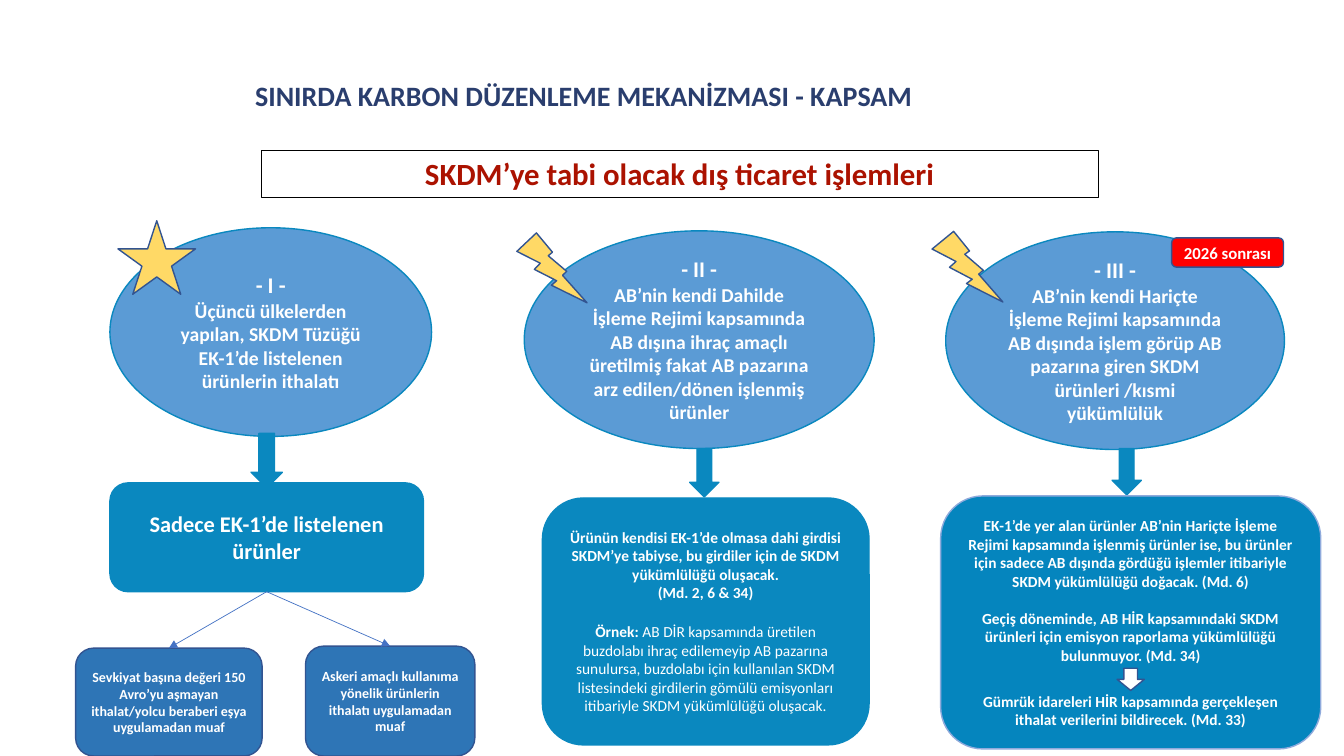
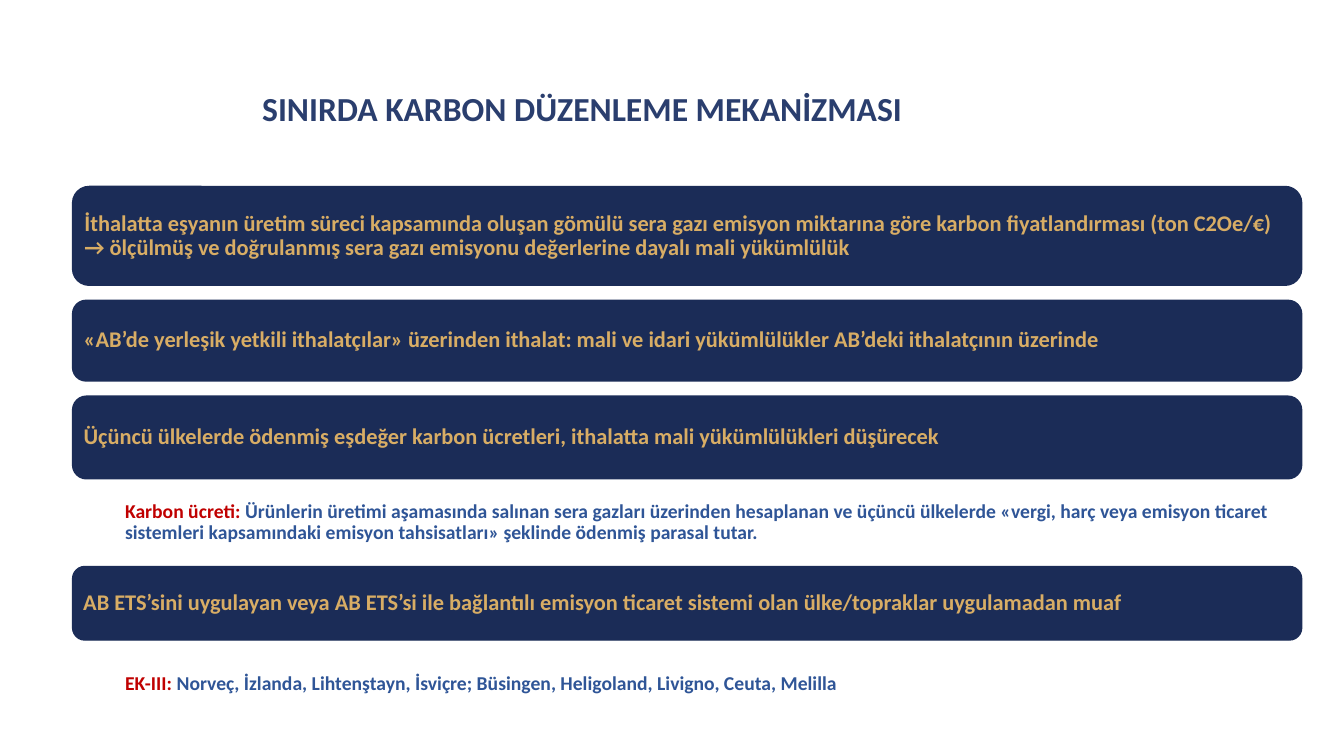
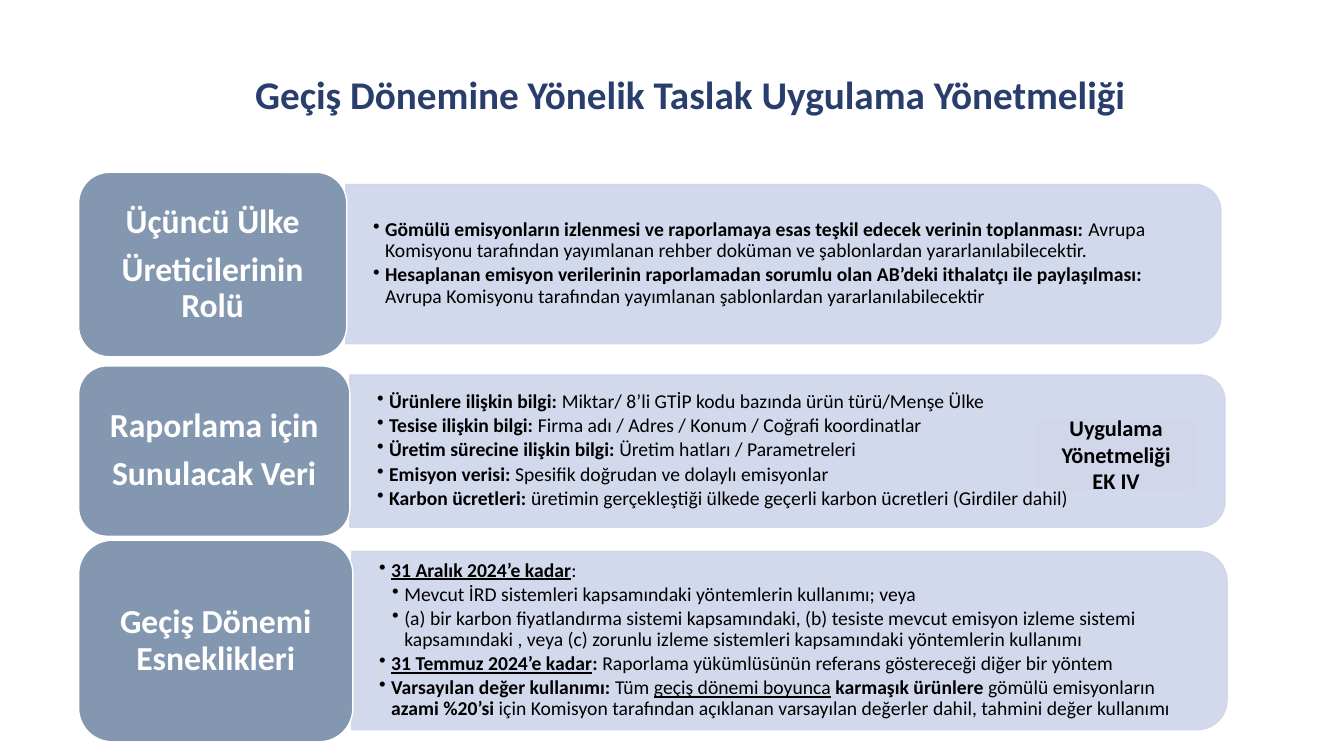
from lxml import etree
from pptx import Presentation
from pptx.dml.color import RGBColor
from pptx.enum.shapes import MSO_CONNECTOR, MSO_SHAPE
from pptx.enum.text import MSO_ANCHOR, MSO_AUTO_SIZE, PP_ALIGN
from pptx.oxml.ns import qn
from pptx.util import Inches, Pt

RECTANGLE, ROUNDED, OVAL = MSO_SHAPE.RECTANGLE, MSO_SHAPE.ROUNDED_RECTANGLE, MSO_SHAPE.OVAL
ARROW, STAR, BOLT = MSO_SHAPE.DOWN_ARROW, MSO_SHAPE.STAR_5_POINT, MSO_SHAPE.LIGHTNING_BOLT
ROUND_TOP = MSO_SHAPE.ROUND_2_SAME_RECTANGLE
LEFT, CENTER = PP_ALIGN.LEFT, PP_ALIGN.CENTER
TOP, MIDDLE = MSO_ANCHOR.TOP, MSO_ANCHOR.MIDDLE
FONT = "Calibri"
COLORS = {
    "title": "2A3E6E", "heading": "AB1200", "black": "000000", "white": "FFFFFF",
    "oval": "5B9BD5", "teal": "0A88BF", "deep teal": "0585BE", "pale edge": "8FAADC",
    "exempt": "2E75B6", "edge": "325491", "connector": "4472C4", "yellow": "FFD966",
    "alert": "FF0000", "navy": "1B2C57", "gold": "D8AD65", "red": "C00000",
    "blue": "2F5597", "band": "CFD5EA", "slate": "8497B0", "annex": "D1D6EA",
}
COLORS = {name: RGBColor.from_string(value) for name, value in COLORS.items()}

deck = Presentation()
deck.slide_width, deck.slide_height = Inches(13.33), Inches(7.5)
COLUMN, ROW = deck.slide_width / 133.3, deck.slide_height / 75


def add_box(slide, kind, at, fill=None, edge=None, width=1):
    left, top, columns, rows = at
    box = slide.shapes.add_shape(kind, int(left * COLUMN), int(top * ROW),
                                 int(columns * COLUMN), int(rows * ROW))
    box.shadow.inherit = False
    if fill:
        box.fill.solid()
        box.fill.fore_color.rgb = COLORS[fill]
    else:
        box.fill.background()
    if edge:
        box.line.color.rgb = COLORS[edge]
        box.line.width = Pt(width)
    else:
        box.line.fill.background()
    return box


def write(box, paragraphs, size, color="white", bold=True, align=CENTER, anchor=MIDDLE,
          spacing=1, after=0, bullets=(), gaps=()):
    frame = box.text_frame
    frame.word_wrap = True
    frame.auto_size = MSO_AUTO_SIZE.NONE
    frame.vertical_anchor = anchor
    for index, spans in enumerate(paragraphs):
        paragraph = frame.paragraphs[0] if index == 0 else frame.add_paragraph()
        if bullets:
            properties = paragraph._p.get_or_add_pPr()
            properties.set("marL", str(Inches(bullets[index])))
            properties.set("indent", str(Inches(-0.12)))
            etree.SubElement(properties, qn("a:buChar")).set("char", "•")
        paragraph.alignment = align
        paragraph.line_spacing = spacing
        paragraph.space_after = Pt(after)
        paragraph.space_before = Pt(gaps[index] if gaps else 0)
        paragraph.font.name = FONT
        paragraph.font.size = Pt(size)
        paragraph.font.bold = bold
        paragraph.font.color.rgb = COLORS[color]
        for text, mark in [(spans, "")] if isinstance(spans, str) else spans:
            span = paragraph.add_run()
            span.text = text
            if "bold" in mark:
                span.font.bold = True
            if "plain" in mark:
                span.font.bold = False
            if "underline" in mark:
                span.font.underline = True
            if "red" in mark:
                span.font.color.rgb = COLORS["red"]


titles = [
    ("SINIRDA KARBON DÜZENLEME MEKANİZMASI - KAPSAM", 20, 1, (24.3, 7.3, 78.5, 4.4)),
    ("SINIRDA KARBON DÜZENLEME MEKANİZMASI", 24, 1, (25, 8.2, 78.4, 5)),
    ("Geçiş Dönemine Yönelik Taslak Uygulama Yönetmeliği", 28, 0.9, (24.3, 7, 100.3, 8.6)),
]
slides = []
for text, size, spacing, (left, top, columns, rows) in titles:
    slide = deck.slides.add_slide(deck.slide_layouts[5])
    title = slide.shapes.title
    title.left, title.top = int(left * COLUMN), int(top * ROW)
    title.width, title.height = int(columns * COLUMN), int(rows * ROW)
    write(title, [text], size, "title", align=LEFT, anchor=TOP, spacing=spacing)
    slides.append(slide)
scope, mechanism, regulation = slides

heading = add_box(scope, RECTANGLE, (25.9, 14.9, 83, 4.7), None, "black", 0.25)
write(heading, ["SKDM’ye tabi olacak dış ticaret işlemleri"], 22, "heading", anchor=TOP)

cases = [
    ((10.9, 22.6, 31.9, 20.7), (24.9, 43, 3.1, 5.4), "- I -",
     "Üçüncü ülkelerden yapılan, SKDM Tüzüğü EK-1’de listelenen ürünlerin ithalatı"),
    ((52, 22.9, 34.7, 21.6), (68.4, 44.5, 2.9, 4.8), "- II -",
     "AB’nin kendi Dahilde İşleme Rejimi kapsamında AB dışına ihraç amaçlı üretilmiş "
     "fakat AB pazarına arz edilen/dönen işlenmiş ürünler"),
    ((93.8, 23, 33.6, 21.6), (110.3, 44.5, 2.9, 4.6), "- III -",
     "AB’nin kendi Hariçte İşleme Rejimi kapsamında AB dışında işlem görüp AB pazarına "
     "giren SKDM ürünleri /kısmi yükümlülük"),
]
for oval_at, arrow_at, number, text in cases:
    oval = add_box(scope, OVAL, oval_at, "oval", "teal")
    write(oval, [number, text], 14)
    oval.text_frame.paragraphs[0].font.size = Pt(16)
    add_box(scope, ARROW, arrow_at, "teal", "teal")

outcomes = [
    ((10.9, 47.9, 31.1, 10.8), "teal", "teal", 16, (0,),
     ["Sadece EK-1’de listelenen ürünler"]),
    ((53.8, 49.4, 32.4, 24.5), "teal", "teal", 11, (0, 0, 14.6),
     ["Ürünün kendisi EK-1’de olmasa dahi girdisi SKDM’ye tabiyse, bu girdiler için de "
      "SKDM yükümlülüğü oluşacak.",
      "(Md. 2, 6 & 34)",
      [("Örnek: ", ""),
       ("AB DİR kapsamında üretilen buzdolabı ihraç edilemeyip AB pazarına sunulursa, "
        "buzdolabı için kullanılan SKDM listesindeki girdilerin gömülü emisyonları "
        "itibariyle SKDM yükümlülüğü oluşacak.", "plain")]]),
    ((93.3, 49.2, 37.7, 25.1), "deep teal", "pale edge", 11, (0, 13.4, 19.4),
     ["EK-1’de yer alan ürünler AB’nin Hariçte İşleme Rejimi kapsamında işlenmiş ürünler "
      "ise, bu ürünler için sadece AB dışında gördüğü işlemler itibariyle SKDM "
      "yükümlülüğü doğacak. (Md. 6)",
      "Geçiş döneminde, AB HİR kapsamındaki SKDM ürünleri için emisyon raporlama "
      "yükümlülüğü bulunmuyor. (Md. 34)",
      "Gümrük idareleri HİR kapsamında gerçekleşen ithalat verilerini bildirecek. (Md. 33)"]),
]
outcome_boxes = []
for at, fill, edge, size, gaps, paragraphs in outcomes:
    box = add_box(scope, ROUNDED, at, fill, edge)
    write(box, paragraphs, size, gaps=gaps)
    outcome_boxes.append(box)

exemptions = [
    ((7.5, 64.3, 18.5, 10.7), "Sevkiyat başına değeri 150 Avro’yu aşmayan ithalat/yolcu "
                              "beraberi eşya uygulamadan muaf"),
    ((30.3, 64.1, 16.8, 10.9), "Askeri amaçlı kullanıma yönelik ürünlerin ithalatı "
                               "uygulamadan muaf"),
]
for at, text in exemptions:
    box = add_box(scope, ROUNDED, at, "exempt", "edge")
    write(box, [text], 10)
    connector = scope.shapes.add_connector(MSO_CONNECTOR.STRAIGHT, 0, 0, 0, 0)
    connector.begin_connect(outcome_boxes[0], 2)
    connector.end_connect(box, 0)
    connector.line.color.rgb = COLORS["connector"]
    connector.line.width = Pt(0.5)
    etree.SubElement(connector.line._get_or_add_ln(), qn("a:tailEnd")).set("type", "triangle")
    etree.SubElement(connector._element.spPr, qn("a:effectLst"))

symbols = [
    (STAR, (11.7, 21.9, 7.7, 7.3), 0, "yellow"),
    (BOLT, (51.7, 22.9, 5.8, 7.8), 348.4, "yellow"),
    (BOLT, (92.8, 22.8, 6.1, 7.7), 350.8, "yellow"),
    (ARROW, (110.8, 66.3, 2.7, 2.2), 0, "white"),
]
for kind, at, rotation, fill in symbols:
    add_box(scope, kind, at, fill, "edge").rotation = rotation
badge = add_box(scope, ROUNDED, (116.2, 23.6, 11.1, 2.9), "alert", "edge")
write(badge, ["2026 sonrası"], 12)

rules = [
    ("bar", 9.8, 1.5,
     "İthalatta eşyanın üretim süreci kapsamında oluşan gömülü sera gazı emisyon miktarına "
     "göre karbon fiyatlandırması (ton C2Oe/€) → ölçülmüş ve doğrulanmış sera gazı "
     "emisyonu değerlerine dayalı mali yükümlülük"),
    ("bar", 8, 1.5,
     "«AB’de yerleşik yetkili ithalatçılar» üzerinden ithalat: mali ve idari yükümlülükler "
     "AB’deki ithalatçının üzerinde"),
    ("bar", 8.2, 0,
     "Üçüncü ülkelerde ödenmiş eşdeğer karbon ücretleri, ithalatta mali yükümlülükleri "
     "düşürecek"),
    ("note", 8.7, 0,
     [("Karbon ücreti: ", "red"),
      ("Ürünlerin üretimi aşamasında salınan sera gazları üzerinden hesaplanan ve üçüncü "
       "ülkelerde «vergi, harç veya emisyon ticaret sistemleri kapsamındaki emisyon "
       "tahsisatları» şeklinde ödenmiş parasal tutar.", "")]),
    ("bar", 7.3, 0,
     "AB ETS’sini uygulayan veya AB ETS’si ile bağlantılı emisyon ticaret sistemi olan "
     "ülke/topraklar uygulamadan muaf"),
    ("note", 8.7, 0,
     [("EK-III: ", "red"),
      ("Norveç, İzlanda, Lihtenştayn, İsviçre; Büsingen, Heligoland, Livigno, Ceuta, "
       "Melilla", "")]),
]
top = 18.5
for kind, rows, gap, text in rules:
    at = (7.2, top, 121.9, rows)
    if kind == "bar":
        box = add_box(mechanism, ROUNDED, at, "navy", "navy")
        size, color, left, right = 16, "gold", 0.07, 0.07
    else:
        box = mechanism.shapes.add_textbox(int(at[0] * COLUMN), int(at[1] * ROW),
                                           int(at[2] * COLUMN), int(at[3] * ROW))
        size, color, left, right = 14, "blue", 0.52, 0.11
    write(box, [text], size, color, align=LEFT, spacing=0.9)
    box.text_frame.margin_left, box.text_frame.margin_right = Inches(left), Inches(right)
    top += rows + gap

topics = [
    ((34.3, 17.1, 26.6, 18.3), (18.3, 15.8), ["Üçüncü Ülke", "Üreticilerinin Rolü"], [
        (0.12, [("Gömülü emisyonların izlenmesi ve raporlamaya esas teşkil edecek verinin "
                 "toplanması: ", "bold"),
                ("Avrupa Komisyonu tarafından yayımlanan rehber doküman ve şablonlardan "
                 "yararlanılabilecektir.", "")]),
        (0.12, [("Hesaplanan emisyon verilerinin raporlamadan sorumlu olan AB’deki ithalatçı "
                 "ile paylaşılması: ", "bold"),
                ("Avrupa Komisyonu tarafından yayımlanan şablonlardan "
                 "yararlanılabilecektir", "")]),
    ]),
    ((34.7, 36.3, 26.9, 16.9), (37.2, 15.1), ["Raporlama için", "Sunulacak Veri"], [
        (0.12, [("Ürünlere ilişkin bilgi: ", "bold"),
                ("Miktar/ 8’li GTİP kodu bazında ürün türü/Menşe Ülke", "")]),
        (0.12, [("Tesise ilişkin bilgi: ", "bold"),
                ("Firma adı / Adres / Konum / Coğrafi koordinatlar", "")]),
        (0.12, [("Üretim sürecine ilişkin bilgi: ", "bold"),
                ("Üretim hatları / Parametreleri", "")]),
        (0.12, [("Emisyon verisi: ", "bold"),
                ("Spesifik doğrudan ve dolaylı emisyonlar", "")]),
        (0.12, [("Karbon ücretleri: ", "bold"),
                ("üretimin gerçekleştiği ülkede geçerli karbon ücretleri "
                 "(Girdiler dahil)", "")]),
    ]),
    ((34.9, 53.6, 27.2, 20), (54.7, 17.7), ["Geçiş Dönemi Esneklikleri"], [
        (0.12, [("31 Aralık 2024’e kadar", "bold underline"), (":", "")]),
        (0.25, "Mevcut İRD sistemleri kapsamındaki yöntemlerin kullanımı; veya"),
        (0.25, "(a) bir karbon fiyatlandırma sistemi kapsamındaki, (b) tesiste mevcut emisyon "
               "izleme sistemi kapsamındaki , veya (c) zorunlu izleme sistemleri "
               "kapsamındaki yöntemlerin kullanımı"),
        (0.12, [("31 Temmuz 2024’e kadar", "bold underline"), (": ", "bold"),
                ("Raporlama yükümlüsünün referans göstereceği diğer bir yöntem", "")]),
        (0.12, [("Varsayılan değer kullanımı: ", "bold"), ("Tüm ", ""),
                ("geçiş dönemi boyunca", "underline"), (" ", ""),
                ("karmaşık ürünlere ", "bold"), ("gömülü emisyonların ", ""),
                ("azami %20’si", "bold"),
                (" için Komisyon tarafından açıklanan varsayılan değerler dahil, tahmini "
                 "değer kullanımı", "")]),
    ]),
]
BAND_LENGTH = 86.8
for (left, label_top, label_columns, label_rows), (top, rows), label, points in topics:
    turned_left = left + (BAND_LENGTH - rows) / 2
    turned_top = top - (BAND_LENGTH - rows) / 2
    band = add_box(regulation, ROUND_TOP, (turned_left, turned_top, rows, BAND_LENGTH),
                   "band", "band")
    band.rotation = 90
    for tint in band._element.spPr.iter(qn("a:srgbClr")):
        etree.SubElement(tint, qn("a:alpha")).set("val", "90000")
    details = regulation.shapes.add_textbox(int(left * COLUMN), int((top + 0.7) * ROW),
                                            int((BAND_LENGTH - 0.8) * COLUMN),
                                            int((rows - 1.5) * ROW))
    write(details, [text for _, text in points], 14, "black", bold=False, align=LEFT,
          spacing=0.9, after=2.1, bullets=[indent for indent, _ in points])
    details.text_frame.margin_left = details.text_frame.margin_right = Inches(0.27)
    box = add_box(regulation, ROUNDED, (7.8, label_top, label_columns, label_rows),
                  "slate", "white")
    write(box, label, 24, spacing=0.9, after=8.4)

annex = add_box(regulation, ROUNDED, (102.7, 41.6, 16, 6.9), "annex", "annex")
write(annex, ["Uygulama Yönetmeliği", "EK IV"], 16, "black")

deck.save("out.pptx")
